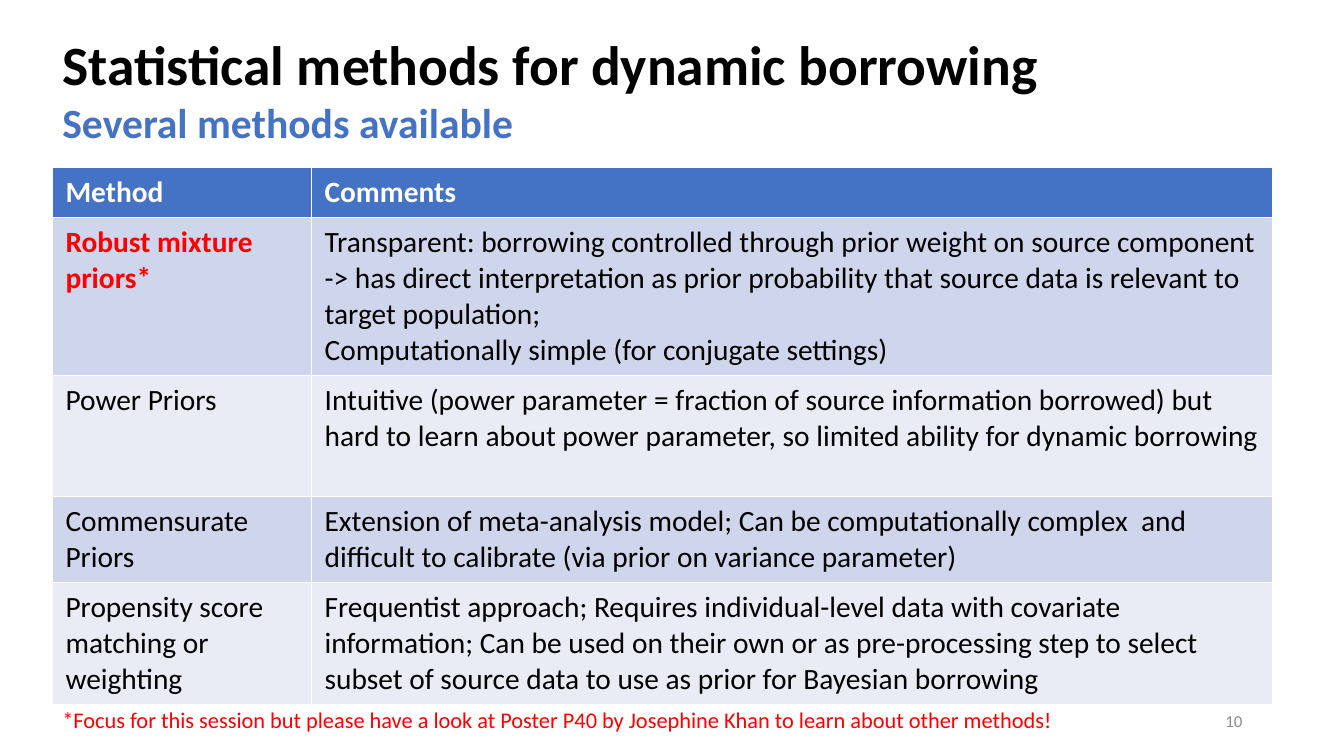
from pptx import Presentation
from pptx.util import Inches, Pt
from pptx.dml.color import RGBColor
from pptx.enum.text import MSO_ANCHOR as Anchor, MSO_AUTO_SIZE as Fit, PP_ALIGN as Align

# Content
TITLE = "Statistical methods for dynamic borrowing"
SUB = "Several methods available"
NOTE = ("*Focus for this session but please have a look at Poster P40 "
        "by Josephine Khan to learn about other methods!")
ROWS = [
    ("Method", "Comments"),
    ("Robust mixture priors*",
     "Transparent: borrowing controlled through prior weight on source component "
     "-> has direct interpretation as prior probability that source data is "
     "relevant to target population;\n"
     "Computationally simple (for conjugate settings)"),
    ("Power Priors",
     "Intuitive (power parameter = fraction of source information borrowed) but "
     "hard to learn about power parameter, so limited ability for dynamic borrowing"),
    ("Commensurate Priors",
     "Extension of meta-analysis model; Can be computationally complex  and "
     "difficult to calibrate (via prior on variance parameter)"),
    ("Propensity score matching or weighting",
     "Frequentist approach; Requires individual-level data with covariate "
     "information; Can be used on their own or as pre-processing step to select "
     "subset of source data to use as prior for Bayesian borrowing"),
]
WIDTHS = [2.57, 9.53]
HEIGHTS = [0.49, 1.56, 1.2, 0.84, 1.2]
LEFT = 0.52
BLUE, RED, BLACK, WHITE, GRAY = "4472C4", "FF0000", "000000", "FFFFFF", "8C8C8C"
BANDS = ["E9EBF5", "CFD5EA"]


def color(code):
    return RGBColor.from_string(code)


def style(frame, size, code, bold=False, align=Align.LEFT, gap=None):
    for par in frame.paragraphs:
        par.alignment = align
        if gap:
            par.line_spacing = gap
        for run in par.runs:
            font = run.font
            font.name, font.size, font.bold = "Calibri", Pt(size), bold
            font.color.rgb = color(code)


def fill_box(box, text, anchor=Anchor.MIDDLE, wrap=True, fit=Fit.NONE):
    frame = box.text_frame
    frame.text = text
    frame.word_wrap, frame.auto_size = wrap, fit
    frame.vertical_anchor = anchor
    return frame


def add_box(x, y, w, h):
    return slide.shapes.add_textbox(Inches(x), Inches(y), Inches(w), Inches(h))


prs = Presentation()
prs.slide_width, prs.slide_height = Inches(13.33), Inches(7.5)
slide = prs.slides.add_slide(prs.slide_layouts[5])

# Title and subtitle
title = slide.shapes.title
title.left, title.top = Inches(LEFT), Inches(0.42)
title.width, title.height = Inches(11.05), Inches(0.49)
style(fill_box(title, TITLE), 39.6, BLACK, True, gap=0.9)
style(fill_box(add_box(LEFT, 1.03, 11.05, 0.49), SUB), 29.7, BLUE, True, gap=0.7)

# Table of methods
table = slide.shapes.add_table(
    len(ROWS), len(WIDTHS), Inches(LEFT), Inches(1.66),
    Inches(sum(WIDTHS)), Inches(sum(HEIGHTS))).table
for col, width in zip(table.columns, WIDTHS):
    col.width = Inches(width)
for r, (row, height) in enumerate(zip(ROWS, HEIGHTS)):
    table.rows[r].height = Inches(height)
    for c, text in enumerate(row):
        cell = table.cell(r, c)
        cell.margin_left, cell.margin_right = Inches(0.13), Inches(0.12)
        cell.margin_top = cell.margin_bottom = Inches(0.07)
        cell.fill.solid()
        cell.fill.fore_color.rgb = color(BANDS[r % 2] if r else BLUE)
        cell.text_frame.text = text
        focus = (r, c) == (1, 0)
        ink = WHITE if r == 0 else RED if focus else BLACK
        style(cell.text_frame, 21, ink, r == 0 or focus)

# Footnote and slide number
note = fill_box(add_box(LEFT, 6.96, 10.15, 0.37), NOTE, Anchor.TOP, False,
                Fit.SHAPE_TO_FIT_TEXT)
style(note, 16, RED)
style(fill_box(add_box(9.42, 6.95, 3, 0.4), "10"), 12, GRAY, align=Align.RIGHT)

prs.save("out.pptx")
